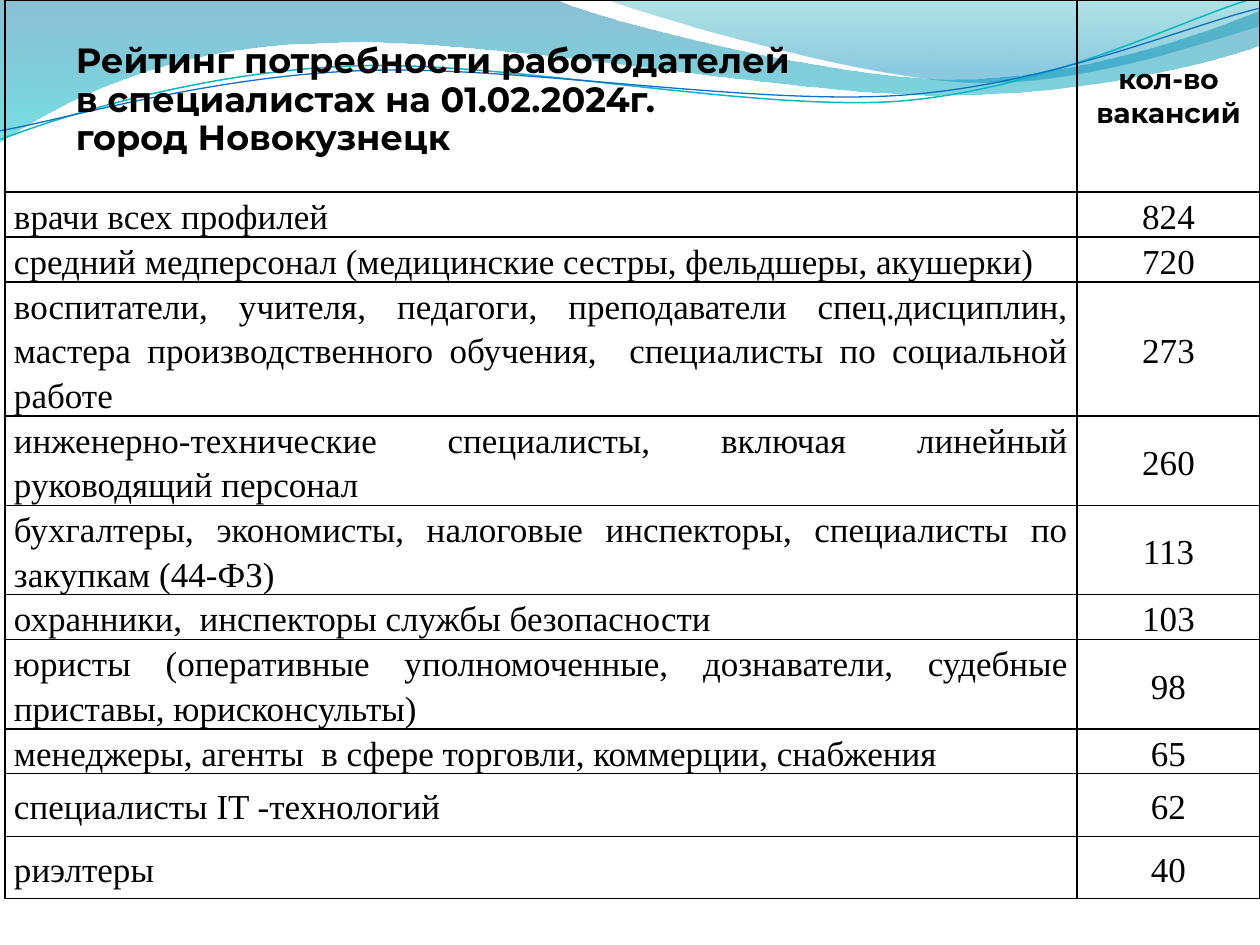
import lxml.etree
import pptx
import pptx.dml.color
import pptx.enum.text
import pptx.oxml
import pptx.oxml.ns
import pptx.util

EMU_PER_PX = 914400 / 126
COLORS = {
    "black": "000000",
    "deep_blue": "0074A1",
    "cyan": "00C6CF",
    "teal": "00A1A9",
    "sky": "008BBF",
    "teal_line": "0AB8BF",
    "blue_line": "0F6FC6",
}
HEADING = [
    "Рейтинг потребности работодателей",
    "в специалистах на 01.02.2024г.",
    "город Новокузнецк",
]
HEADING_HEIGHT = 192
# Occupation, vacancies, row height
VACANCIES = [
    ("врачи всех профилей", 824, 45),
    ("средний медперсонал (медицинские сестры, фельдшеры, акушерки)", 720, 45),
    ("воспитатели, учителя, педагоги, преподаватели спец.дисциплин, мастера "
     "производственного обучения,  специалисты по социальной работе", 273, 134),
    ("инженерно-технические специалисты, включая линейный руководящий персонал", 260, 89),
    ("бухгалтеры, экономисты, налоговые инспекторы, специалисты по закупкам (44-ФЗ)", 113, 89),
    ("охранники,  инспекторы службы безопасности", 103, 45),
    ("юристы (оперативные уполномоченные, дознаватели, судебные приставы, юрисконсульты)",
     98, 89),
    ("менеджеры, агенты  в сфере торговли, коммерции, снабжения", 65, 44),
    ("специалисты IT -технологий", 62, 63),
    ("риэлтеры", 40, 62),
]
ALIGN = pptx.enum.text.PP_ALIGN


def px(length):
    return pptx.util.Emu(round(length * EMU_PER_PX))


def rgb(name):
    return pptx.dml.color.RGBColor.from_string(COLORS[name])


def add_outline(slide, box, start, segments, close):
    """Draw lines (2 numbers) and Bezier curves (6 numbers)."""
    left, top = box[:2]
    points = [segment[i:i + 2] for segment in segments for i in range(0, len(segment), 2)]
    builder = slide.shapes.build_freeform(*start, scale=EMU_PER_PX)
    builder.add_line_segments(points, close=close)
    shape = builder.convert_to_shape(px(left), px(top))
    shape.shadow.inherit = False
    # Each curve takes the points of three line segments
    lines = iter(list(shape.element.spPr.iter(pptx.oxml.ns.qn("a:lnTo"))))
    for segment in segments:
        parts = [next(lines) for _ in range(len(segment) // 2)]
        if len(parts) == 3:
            curve = lxml.etree.Element(pptx.oxml.ns.qn("a:cubicBezTo"))
            parts[0].addprevious(curve)
            for part in parts:
                curve.append(part[0])
                part.getparent().remove(part)
    return shape


def add_wave(slide, box, start, segments, stops):
    shape = add_outline(slide, box, start, segments, True)
    shape.line.fill.background()
    shape.fill.gradient()
    shape.fill.gradient_angle = 270
    for stop, (position, color, opacity) in zip(shape.fill.gradient_stops, stops):
        stop.position = position
        stop.color.rgb = rgb(color)
    # Opacity of each stop
    colors = shape.element.spPr.iter(pptx.oxml.ns.qn("a:srgbClr"))
    for element, (position, color, opacity) in zip(colors, stops):
        element.append(pptx.oxml.parse_xml(
            f'<a:alpha {pptx.oxml.ns.nsdecls("a")} val="{opacity * 1000}"/>'))


def add_wave_line(slide, box, start, segments, color, width):
    shape = add_outline(slide, box, start, segments, False)
    shape.rotation = 357.3
    shape.fill.background()
    shape.line.color.rgb = rgb(color)
    shape.line.width = pptx.util.Pt(width)


def add_waves(slide, box):
    add_wave(slide, box, (0, 0), [
        (554, -1), (600, 21, 837, 79, 955, 79), (1075, 79, 1207, 33, 1260, 11),
        (1261, 45), (1239, 55, 1096, 96, 940, 95), (784, 95, 481, 35, 324, 43),
        (163, 45, 58, 105, -1, 142), (0, 0),
    ], [(0, "deep_blue", 45), (1, "cyan", 55)])
    add_wave(slide, box, (604, -1), [
        (641, 14, 859, 78, 969, 82), (1079, 87, 1211, 40, 1260, 26), (1260, 0),
        (604, -1),
    ], [(0, "teal", 30), (0.8, "sky", 45)])
    add_wave_line(slide, box, (-2, 110), [
        (58, 90, 199, 52, 350, 53), (499, 53, 745, 117, 896, 114),
        (1049, 109, 1184, 45, 1260, 27),
    ], "teal_line", 0.85)
    add_wave_line(slide, box, (-2, 101), [
        (57, 94, 207, 57, 357, 58), (509, 58, 750, 112, 902, 108),
        (1052, 104, 1188, 52, 1262, 38),
    ], "blue_line", 0.75)


def fill_cell(cell, lines, font, size, bold, align, spacing, indent=0, top=0):
    properties = cell._tc.get_or_add_tcPr()
    for side in ("lnL", "lnR", "lnT", "lnB"):
        properties.append(pptx.oxml.parse_xml(
            f'<a:{side} {pptx.oxml.ns.nsdecls("a")} w="12700"><a:solidFill>'
            f'<a:srgbClr val="{COLORS["black"]}"/></a:solidFill></a:{side}>'))
    cell.fill.background()
    cell.vertical_anchor = pptx.enum.text.MSO_ANCHOR.MIDDLE
    cell.margin_left = cell.margin_right = px(9)
    cell.margin_top, cell.margin_bottom = px(top), 0
    cell.text = "\n".join(lines)
    for paragraph in cell.text_frame.paragraphs:
        paragraph.alignment = align
        paragraph.line_spacing = spacing
        if indent:
            paragraph._p.get_or_add_pPr().set("marL", str(px(indent)))
        paragraph.font.name = font
        paragraph.font.size = pptx.util.Pt(size)
        paragraph.font.bold = bold
        paragraph.font.color.rgb = rgb("black")


def add_vacancy_table(slide, box):
    left, top, width, height = box
    table = slide.shapes.add_table(
        len(VACANCIES) + 1, 2, px(left), px(top), px(width), px(height)).table
    table.first_row = table.horz_banding = False
    count_width = 183
    table.columns[0].width = px(width - count_width)
    table.columns[1].width = px(count_width)

    # Heading row
    table.rows[0].height = px(HEADING_HEIGHT)
    fill_cell(table.cell(0, 0), HEADING, "Montserrat", 20, True, ALIGN.LEFT, 0.9,
              indent=62, top=9)
    fill_cell(table.cell(0, 1), ["кол-во вакансий"], "Montserrat", 16, True,
              ALIGN.CENTER, 1.0)

    # Occupation rows
    for row, (occupation, count, row_height) in enumerate(VACANCIES, 1):
        table.rows[row].height = px(row_height)
        for column, (text, align) in enumerate(
                [(occupation, ALIGN.JUSTIFY), (str(count), ALIGN.CENTER)]):
            fill_cell(table.cell(row, column), [text], "Times New Roman", 20, False,
                      align, 1.15)


def main():
    presentation = pptx.Presentation()
    presentation.slide_width, presentation.slide_height = px(1260), px(945)
    slide = presentation.slides.add_slide(presentation.slide_layouts[6])
    add_waves(slide, (0, 0, 1260, 142))
    table_height = HEADING_HEIGHT + sum(row[2] for row in VACANCIES)
    add_vacancy_table(slide, (5, 0, 1255, table_height))
    presentation.save("out.pptx")


if __name__ == "__main__":
    main()
